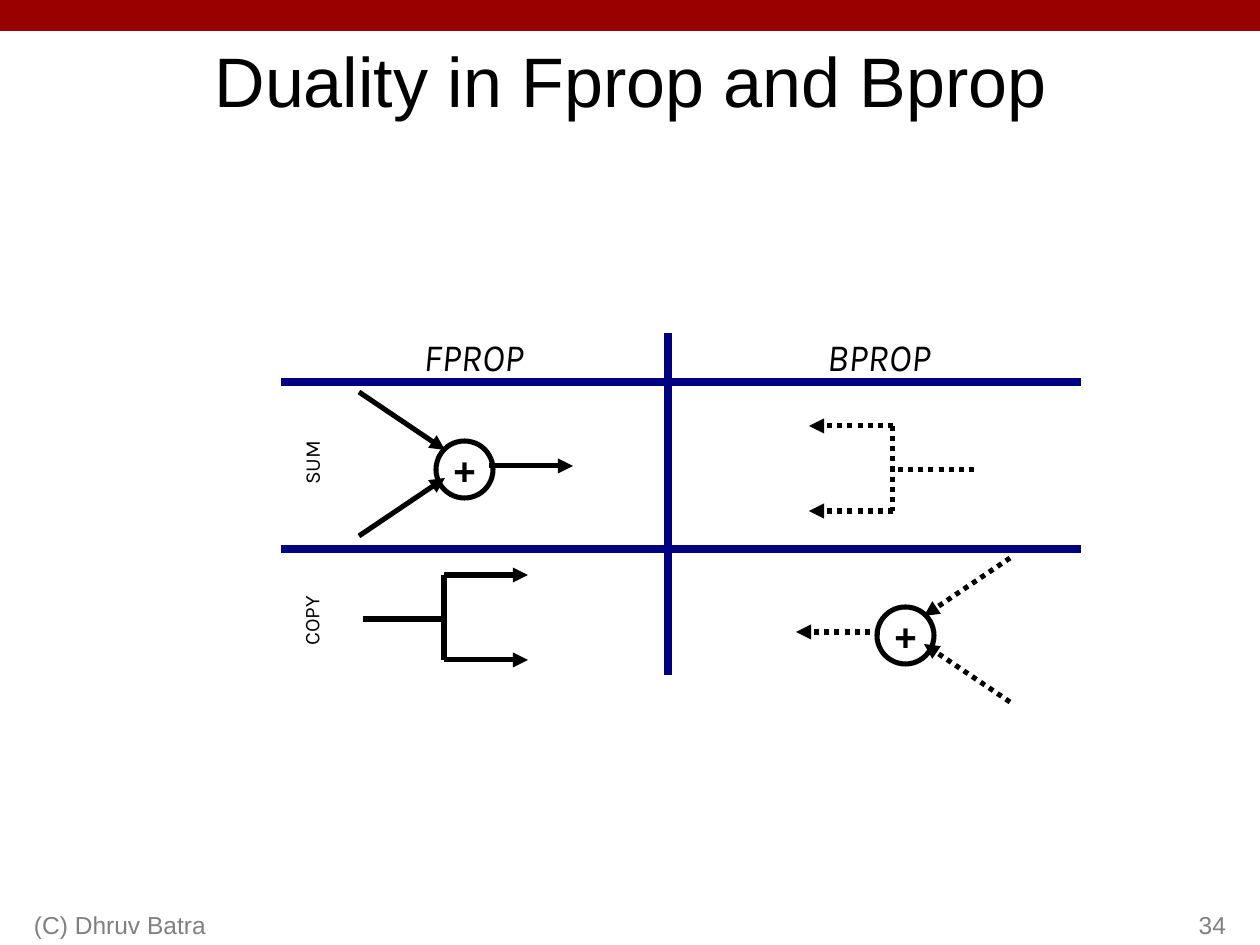
from dataclasses import dataclass

from lxml import etree
from pptx import Presentation
from pptx.dml.color import RGBColor
from pptx.enum.dml import MSO_LINE
from pptx.enum.shapes import MSO_CONNECTOR, MSO_SHAPE
from pptx.enum.text import MSO_ANCHOR, PP_ALIGN
from pptx.oxml.ns import qn
from pptx.shapes.autoshape import Shape
from pptx.slide import Slide
from pptx.util import Emu, Pt

PX_PER_INCH = 126
EMU_PER_PX = 914400 / PX_PER_INCH

LEFT, CENTER, RIGHT = PP_ALIGN.LEFT, PP_ALIGN.CENTER, PP_ALIGN.RIGHT
TOP, MIDDLE, BOTTOM = MSO_ANCHOR.TOP, MSO_ANCHOR.MIDDLE, MSO_ANCHOR.BOTTOM
STRAIGHT = MSO_CONNECTOR.STRAIGHT
RECTANGLE, OVAL = MSO_SHAPE.RECTANGLE, MSO_SHAPE.OVAL
DOTTED = MSO_LINE.ROUND_DOT  # written as sysDot

FORWARD, BACKWARD = 1, -1


@dataclass(frozen=True)
class Theme:
    banner: RGBColor = RGBColor(0x99, 0x00, 0x00)
    ink: RGBColor = RGBColor(0x00, 0x00, 0x00)
    muted: RGBColor = RGBColor(0x80, 0x80, 0x80)
    grid: RGBColor = RGBColor(0x00, 0x00, 0x80)
    body_font: str = "Arial"
    label_font: str = "Karla"
    title_size: float = 40
    footer_size: float = 14
    heading_size: float = 22
    row_size: float = 12
    flow_width: float = 2.89
    grid_width: float = 4.31


THEME = Theme()


@dataclass(frozen=True)
class Label:
    text: str
    left: int
    top: int
    width: int
    height: int
    size: float
    font: str = THEME.body_font
    color: RGBColor = THEME.ink
    align: PP_ALIGN = CENTER
    anchor: MSO_ANCHOR = TOP
    italic: bool = False
    rotation: int = 0
    margins: tuple[int, int, int, int] = (11, 8, 11, 5)


@dataclass(frozen=True)
class Symbol:
    """A flow symbol; dotted when it runs backward."""
    x: int
    y: int
    direction: int


@dataclass(frozen=True)
class GridLine:
    x1: int
    y1: int
    x2: int
    y2: int


FRAME_MARGINS = (13, 6, 13, 6)
LABELS = [
    Label("Duality in Fprop and Bprop", 95, 32, 1071, 94, THEME.title_size,
          anchor=MIDDLE, margins=FRAME_MARGINS),
    Label("(C) Dhruv Batra", 21, 882, 399, 63, THEME.footer_size, color=THEME.muted,
          align=LEFT, anchor=BOTTOM, margins=FRAME_MARGINS),
    Label("34", 977, 882, 262, 63, THEME.footer_size, color=THEME.muted,
          align=RIGHT, anchor=BOTTOM, margins=FRAME_MARGINS),
    Label("FPROP", 387, 325, 173, 96, THEME.heading_size, THEME.label_font, italic=True),
    Label("BPROP", 791, 325, 175, 60, THEME.heading_size, THEME.label_font, italic=True),
    Label("SUM", 255, 441, 115, 43, THEME.row_size, THEME.label_font, rotation=270),
    Label("COPY", 271, 583, 115, 76, THEME.row_size, THEME.label_font, rotation=270),
]
SUMS = [Symbol(464, 469, FORWARD), Symbol(905, 635, BACKWARD)]
COPIES = [Symbol(893, 470, BACKWARD), Symbol(444, 619, FORWARD)]
GRID = [
    GridLine(281, 549, 1081, 549),
    GridLine(281, 382, 1081, 382),
    GridLine(668, 675, 668, 333),
]


def px(length: int) -> Emu:
    return Emu(round(length * EMU_PER_PX))


def write(shape: Shape, label: Label, bold: bool = False) -> None:
    frame = shape.text_frame
    frame.vertical_anchor = label.anchor
    (frame.margin_left, frame.margin_top,
     frame.margin_right, frame.margin_bottom) = map(px, label.margins)
    para = frame.paragraphs[0]
    para.text = label.text
    para.alignment = label.align
    font = para.font
    font.name, font.size = label.font, Pt(label.size)
    font.bold, font.italic = bold, label.italic
    font.color.rgb = label.color


def draw_label(page: Slide, label: Label) -> None:
    box = page.shapes.add_textbox(
        px(label.left), px(label.top), px(label.width), px(label.height))
    box.rotation = label.rotation
    box.text_frame.word_wrap = True
    write(box, label)


def draw_line(page: Slide, x1: int, y1: int, x2: int, y2: int,
              color: RGBColor, width: float,
              dotted: bool = False, arrow: bool = False) -> None:
    connector = page.shapes.add_connector(STRAIGHT, px(x1), px(y1), px(x2), px(y2))
    line = connector.line
    line.color.rgb = color
    line.width = Pt(width)
    if dotted:
        line.dash_style = DOTTED
    properties = connector.element.spPr
    if arrow:
        etree.SubElement(properties.find(qn("a:ln")), qn("a:tailEnd"), type="triangle")
    etree.SubElement(properties, qn("a:effectLst"))


def draw_flow(page: Slide, symbol: Symbol, start: tuple[int, int],
              end: tuple[int, int], arrow: bool = True) -> None:
    """Draw a line by offsets from the symbol, x along its direction."""
    (dx1, dy1), (dx2, dy2) = start, end
    way = symbol.direction
    draw_line(page, symbol.x + way * dx1, symbol.y + dy1,
              symbol.x + way * dx2, symbol.y + dy2,
              THEME.ink, THEME.flow_width, way == BACKWARD, arrow)


def draw_sum(page: Slide, symbol: Symbol) -> None:
    """Draw a plus node with two inputs and one output."""
    size = 57
    left, top = symbol.x - size // 2, symbol.y - size // 2
    node = page.shapes.add_shape(OVAL, px(left), px(top), px(size), px(size))
    node.shadow.inherit = False
    node.fill.background()
    node.line.color.rgb = THEME.ink
    node.line.width = Pt(THEME.flow_width)
    node.text_frame.word_wrap = False
    write(node, Label("+", left, top, size, size, THEME.heading_size,
                      anchor=MIDDLE, margins=(14, 10, 14, 8)), bold=True)
    draw_flow(page, symbol, (-105, -77), (-19, -19))
    draw_flow(page, symbol, (-105, 67), (-19, 9))
    draw_flow(page, symbol, (25, -3), (109, -3))


def draw_copy(page: Slide, symbol: Symbol) -> None:
    """Draw a stem that splits into two arrows."""
    upper, lower = -44, 41
    for branch in (upper, lower):
        draw_flow(page, symbol, (0, branch), (84, branch))
    draw_flow(page, symbol, (0, upper), (0, lower), arrow=False)
    draw_flow(page, symbol, (-81, 0), (3, 0), arrow=False)


def draw_banner(page: Slide) -> None:
    banner = page.shapes.add_shape(RECTANGLE, 0, 0, px(1260), px(31))
    banner.shadow.inherit = False
    banner.fill.solid()
    banner.fill.fore_color.rgb = THEME.banner
    banner.line.fill.background()


def main() -> None:
    deck = Presentation()
    deck.slide_width, deck.slide_height = px(1260), px(945)
    page = deck.slides.add_slide(deck.slide_layouts[6])
    draw_banner(page)
    for symbol in SUMS:
        draw_sum(page, symbol)
    for symbol in COPIES:
        draw_copy(page, symbol)
    for rule in GRID:
        draw_line(page, rule.x1, rule.y1, rule.x2, rule.y2, THEME.grid, THEME.grid_width)
    for label in LABELS:
        draw_label(page, label)
    deck.save("out.pptx")


if __name__ == "__main__":
    main()
